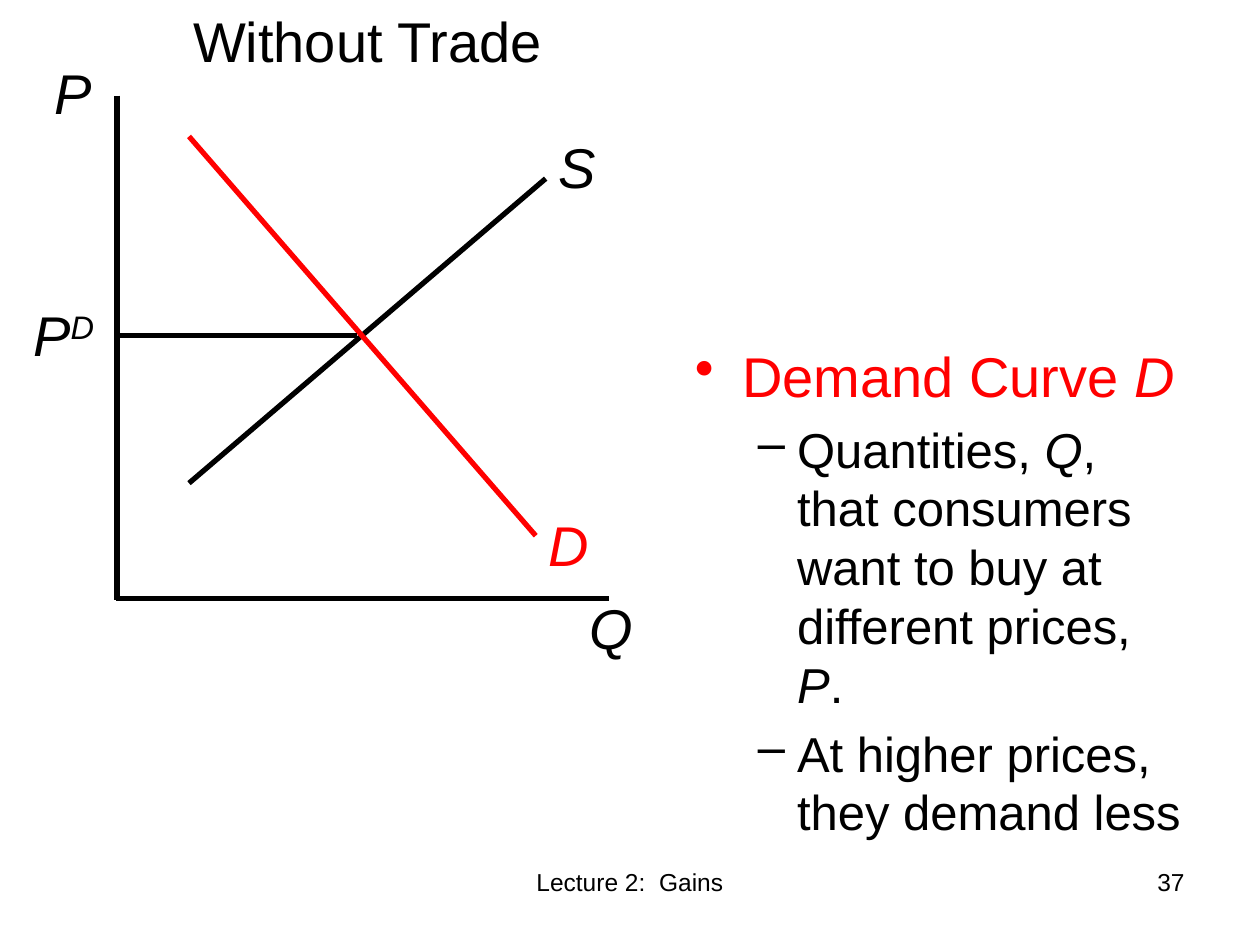
import dataclasses

import lxml.etree
import pptx
import pptx.dml.color
import pptx.enum.shapes
import pptx.enum.text
import pptx.oxml.ns
import pptx.util

Cm = pptx.util.Cm
Pt = pptx.util.Pt
RGB = pptx.dml.color.RGBColor
qn = pptx.oxml.ns.qn
Align = pptx.enum.text.PP_ALIGN


@dataclasses.dataclass(frozen=True)
class Theme:
    font: str = "Arial"
    ink: RGB = RGB(0, 0, 0)
    demand: RGB = RGB(255, 0, 0)
    large: int = 32
    detail: int = 28
    footer: int = 14
    stroke: int = 3


THEME = Theme()


def style(paragraph, size, color, italic=None, align=None):
    font = paragraph.font
    font.name, font.size, font.italic = THEME.font, Pt(size), italic
    font.color.rgb = color
    paragraph.alignment = align


def add_frame(slide, left, top, width, height):
    frame = slide.shapes.add_textbox(Cm(left), Cm(top), Cm(width), Cm(height)).text_frame
    frame.word_wrap = True
    return frame


def add_caption(slide, text, left, top, width, height, size, align):
    caption = add_frame(slide, left, top, width, height).paragraphs[0]
    caption.text = text
    style(caption, size, THEME.ink, align=align)


def add_label(slide, symbol, left, top, color=THEME.ink, superscript=None):
    frame = add_frame(slide, left, top, 5.08, 1.62)
    frame.auto_size = pptx.enum.text.MSO_AUTO_SIZE.SHAPE_TO_FIT_TEXT
    label = frame.paragraphs[0]
    label.text = symbol
    style(label, THEME.large, color, italic=True)
    if superscript:
        raised = label.add_run()
        raised.text = superscript
        raised._r.get_or_add_rPr().set("baseline", "30000")


def add_line(slide, start, end, color=THEME.ink):
    line = slide.shapes.add_connector(
        pptx.enum.shapes.MSO_CONNECTOR.STRAIGHT, *map(Cm, start + end))
    line.line.color.rgb = color
    line.line.width = Pt(THEME.stroke)
    lxml.etree.SubElement(line._element.spPr, qn("a:effectLst"))


def add_bullet(paragraph, parts, level, size, color, mark, margin, hanging):
    for text, italic in parts:
        run = paragraph.add_run()
        run.text = text
        if italic:
            run.font.italic = True
    paragraph.level = level
    paragraph.space_before = Pt(size * 0.2)
    style(paragraph, size, color)
    properties = paragraph._p.get_or_add_pPr()
    properties.set("marL", str(Cm(margin)))
    properties.set("indent", str(-Cm(hanging)))
    bullet = lxml.etree.Element(qn("a:buChar"), char=mark)
    properties.find(qn("a:defRPr")).addprevious(bullet)


def add_explanation(slide):
    frame = add_frame(slide, 13.76, 6.77, 10.37, 8.04)
    heading = [("Demand Curve ", False), ("D", True)]
    add_bullet(frame.paragraphs[0], heading, 0, THEME.large, THEME.demand, "•", 0.95, 0.95)
    details = [
        [("Quantities, ", False), ("Q", True),
         (", that consumers want to buy at different prices, ", False),
         ("P", True), (".", False)],
        [("At higher prices, they demand less", False)],
    ]
    for parts in details:
        add_bullet(frame.add_paragraph(), parts, 1, THEME.detail, THEME.ink, "–", 2.06, 0.79)


def add_market_diagram(slide):
    add_line(slide, (2.36, 1.93), (2.36, 12.09))
    add_line(slide, (11, 3.6), (3.81, 9.74))
    add_line(slide, (12.28, 12.06), (2.33, 12.06))
    add_line(slide, (10.8, 10.8), (3.81, 2.75), THEME.demand)
    add_label(slide, "S", 11, 2.54)
    add_label(slide, "D", 10.8, 10.16, THEME.demand)
    add_label(slide, "Q", 11.64, 11.85)
    add_label(slide, "P", 0.85, 1.06)
    add_label(slide, "P", 0.42, 5.93, superscript="D")
    add_line(slide, (7.2, 6.77), (2.33, 6.77))


def main():
    deck = pptx.Presentation()
    deck.slide_width, deck.slide_height = Cm(25.4), Cm(19.05)
    slide = deck.slides.add_slide(deck.slide_layouts[6])
    add_caption(slide, "37", 18.2, 17.36, 5.93, 1.32, THEME.footer, Align.RIGHT)
    add_caption(slide, "Lecture 2:  Gains", 8.68, 17.36, 8.04, 1.32, THEME.footer, Align.CENTER)
    add_market_diagram(slide)
    add_caption(slide, "Without Trade", 3.6, 0, 7.62, 1.62, THEME.large, Align.CENTER)
    add_explanation(slide)
    deck.save("out.pptx")


if __name__ == "__main__":
    main()
